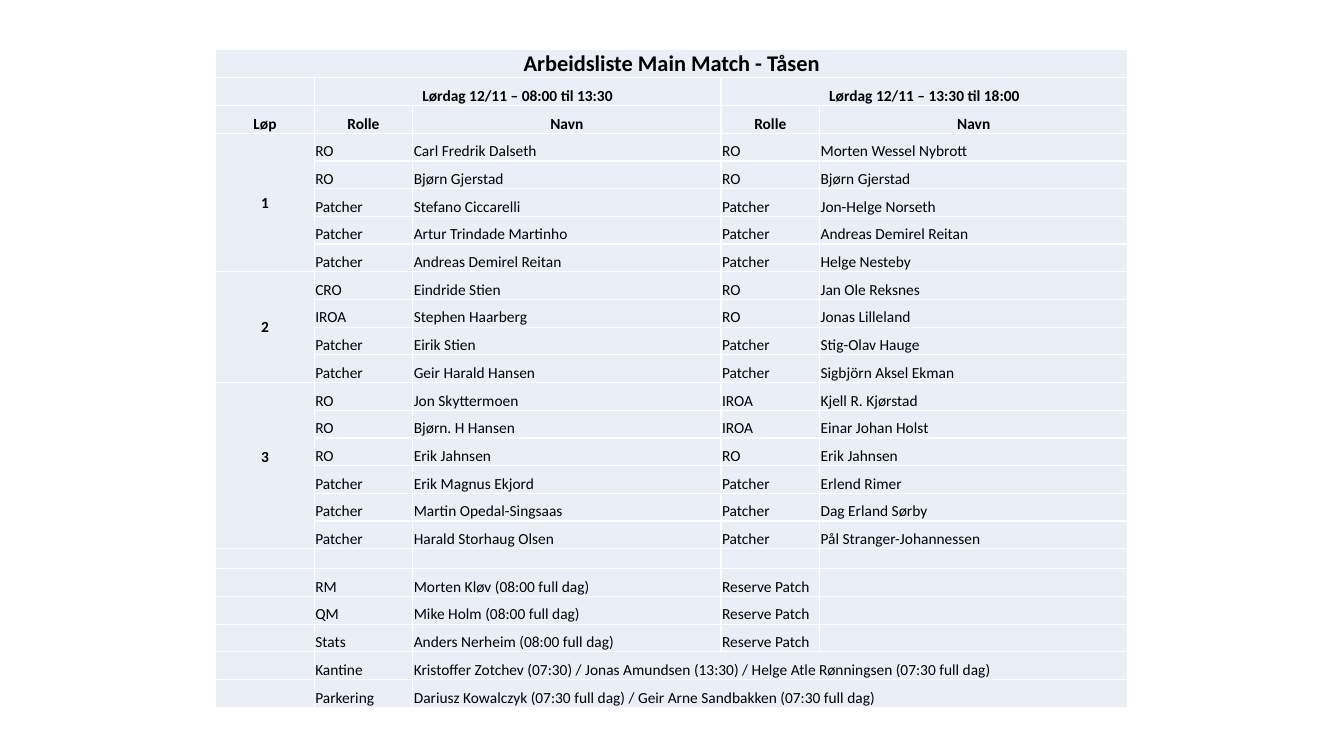
import pptx
import pptx.util
import pptx.dml.color
import pptx.enum.text
import pptx.oxml
import pptx.oxml.ns

Pt = pptx.util.Pt
RGBColor = pptx.dml.color.RGBColor
ALIGN = pptx.enum.text.PP_ALIGN
ANCHOR = pptx.enum.text.MSO_ANCHOR

PALE_BLUE = RGBColor(0xEA, 0xEF, 0xF7)
WHITE = RGBColor(0xFF, 0xFF, 0xFF)
BLACK = RGBColor(0, 0, 0)
FONT = "Calibri"
TITLE_SIZE, BODY_SIZE = 16, 11
INSET = 0.72
COLUMN_WIDTHS = [70.4, 70.4, 220.2, 70.4, 220.2]
ROW_HEIGHT, SPACER_HEIGHT = 19.8, 14.2

TITLE = "Arbeidsliste Main Match - Tåsen"
SHIFTS = ["Lørdag 12/11 – 08:00 til 13:30", "Lørdag 12/11 – 13:30 til 18:00"]
HEADINGS = ["Løp", "Rolle", "Navn", "Rolle", "Navn"]

# Each stage: morning role and name, afternoon role and name
STAGES = {
    "1": [
        ("RO", "Carl Fredrik Dalseth", "RO", "Morten Wessel Nybrott"),
        ("RO", "Bjørn Gjerstad", "RO", "Bjørn Gjerstad"),
        ("Patcher", "Stefano Ciccarelli", "Patcher", "Jon-Helge Norseth"),
        ("Patcher", "Artur Trindade Martinho", "Patcher", "Andreas Demirel Reitan"),
        ("Patcher", "Andreas Demirel Reitan", "Patcher", "Helge Nesteby"),
    ],
    "2": [
        ("CRO", "Eindride Stien", "RO", "Jan Ole Reksnes"),
        ("IROA", "Stephen Haarberg", "RO", "Jonas Lilleland"),
        ("Patcher", "Eirik Stien", "Patcher", "Stig-Olav Hauge"),
        ("Patcher", "Geir Harald Hansen", "Patcher", "Sigbjörn Aksel Ekman"),
    ],
    "3": [
        ("RO", "Jon Skyttermoen", "IROA", "Kjell R. Kjørstad"),
        ("RO", "Bjørn. H Hansen", "IROA", "Einar Johan Holst"),
        ("RO", "Erik Jahnsen", "RO", "Erik Jahnsen"),
        ("Patcher", "Erik Magnus Ekjord", "Patcher", "Erlend Rimer"),
        ("Patcher", "Martin Opedal-Singsaas", "Patcher", "Dag Erland Sørby"),
        ("Patcher", "Harald Storhaug Olsen", "Patcher", "Pål Stranger-Johannessen"),
    ],
}
RESERVES = [
    ("RM", "Morten Kløv (08:00 full dag)", "Reserve Patch"),
    ("QM", "Mike Holm (08:00 full dag)", "Reserve Patch"),
    ("Stats", "Anders Nerheim (08:00 full dag)", "Reserve Patch"),
]
SERVICES = [
    ("Kantine", "Kristoffer Zotchev (07:30) / Jonas Amundsen (13:30) / "
                "Helge Atle Rønningsen (07:30 full dag)"),
    ("Parkering", "Dariusz Kowalczyk (07:30 full dag) / "
                  "Geir Arne Sandbakken (07:30 full dag)"),
]


def style_cell(cell):
    """Fill, insets, white borders and the line height of an empty cell."""
    cell.fill.solid()
    cell.fill.fore_color.rgb = PALE_BLUE
    cell.margin_left = cell.margin_right = cell.margin_top = Pt(INSET)
    cell.margin_bottom = 0
    cell.vertical_anchor = ANCHOR.BOTTOM
    properties = cell._tc.get_or_add_tcPr()
    for position, side in enumerate(("lnL", "lnR", "lnT", "lnB")):
        properties.insert(position, pptx.oxml.parse_xml(
            f'<a:{side} {pptx.oxml.ns.nsdecls("a")} w="{Pt(1)}"><a:solidFill>'
            f'<a:srgbClr val="{WHITE}"/></a:solidFill></a:{side}>'))
    end = cell.text_frame.paragraphs[0]._p.get_or_add_endParaRPr()
    end.set("sz", str(BODY_SIZE * 100))


def write(cell, text, size=BODY_SIZE, heading=False):
    paragraph = cell.text_frame.paragraphs[0]
    paragraph.alignment = ALIGN.CENTER if heading else ALIGN.LEFT
    run = paragraph.add_run()
    run.text = text
    run.font.name = FONT
    run.font.size = Pt(size)
    run.font.bold = heading
    run.font.color.rgb = BLACK


def write_row(roster, row, texts):
    for column, text in enumerate(texts, start=1):
        write(roster.cell(row, column), text)


def add_header(roster):
    roster.cell(0, 0).merge(roster.cell(0, 4))
    write(roster.cell(0, 0), TITLE, TITLE_SIZE, heading=True)
    for column, shift in zip((1, 3), SHIFTS):
        roster.cell(1, column).merge(roster.cell(1, column + 1))
        write(roster.cell(1, column), shift, heading=True)
    for column, heading in enumerate(HEADINGS):
        write(roster.cell(2, column), heading, heading=True)


def add_stages(roster, row):
    """Write the stages from the given row and return the row after them."""
    for number, crew in STAGES.items():
        stage = roster.cell(row, 0)
        stage.merge(roster.cell(row + len(crew) - 1, 0))
        stage.vertical_anchor = ANCHOR.MIDDLE
        write(stage, number, heading=True)
        if number == "3":
            stage.margin_bottom = Pt(13.4)  # number sits one half line higher
        for members in crew:
            write_row(roster, row, members)
            row += 1
    return row


def add_support(roster, row):
    for texts in RESERVES + SERVICES:
        if texts in SERVICES:
            roster.cell(row, 2).merge(roster.cell(row, 4))
        write_row(roster, row, texts)
        row += 1


def add_roster(slide, left, top):
    spacer = 3 + sum(len(crew) for crew in STAGES.values())
    heights = [ROW_HEIGHT] * (spacer + 1 + len(RESERVES) + len(SERVICES))
    heights[spacer] = SPACER_HEIGHT
    roster = slide.shapes.add_table(
        len(heights), len(COLUMN_WIDTHS), Pt(left), Pt(top),
        Pt(sum(COLUMN_WIDTHS)), Pt(sum(heights))).table
    roster.first_row = roster.horz_banding = False
    for column, width in zip(roster.columns, COLUMN_WIDTHS):
        column.width = Pt(width)
    for row, height in zip(roster.rows, heights):
        row.height = Pt(height)
    for cell in roster.iter_cells():
        style_cell(cell)

    add_header(roster)
    spacer_row = add_stages(roster, 3)
    add_support(roster, spacer_row + 1)


def main():
    presentation = pptx.Presentation()
    presentation.slide_width, presentation.slide_height = Pt(960), Pt(540)
    slide = presentation.slides.add_slide(presentation.slide_layouts[6])
    add_roster(slide, left=154.1, top=35.3)
    presentation.save("out.pptx")


if __name__ == "__main__":
    main()
